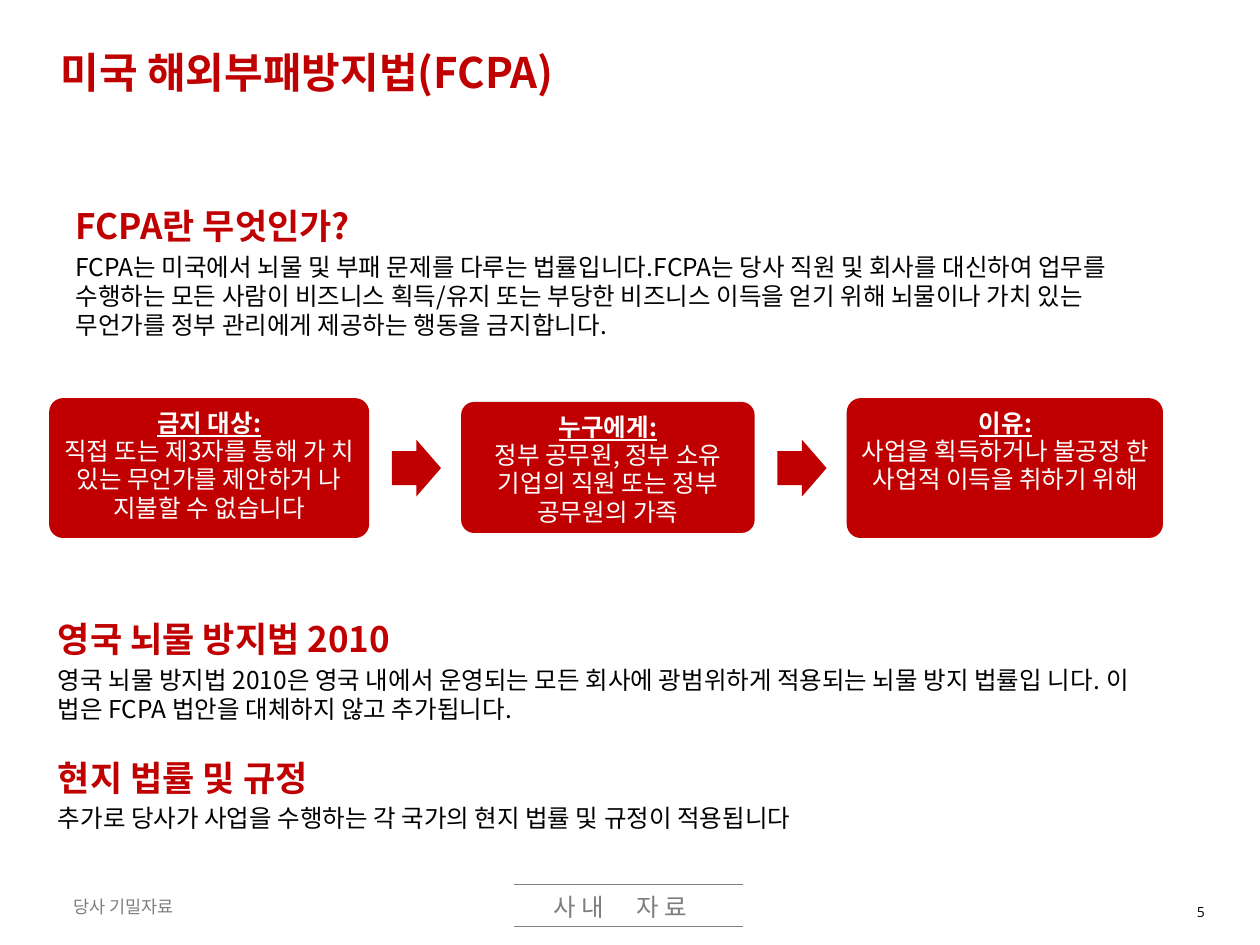
from pptx import Presentation
from pptx.dml.color import RGBColor
from pptx.enum.shapes import MSO_CONNECTOR, MSO_SHAPE as SHAPE
from pptx.enum.text import MSO_AUTO_SIZE as AUTO, PP_ALIGN as ALIGN
from pptx.oxml.ns import qn
from pptx.util import Inches, Pt

RED = RGBColor(0xC0, 0x00, 0x00)
GRAY = RGBColor(0x7E, 0x7E, 0x7E)
BLACK = RGBColor(0x00, 0x00, 0x00)
WHITE = RGBColor(0xFF, 0xFF, 0xFF)
KOREAN, LATIN = "Noto Sans CJK KR", "Open Sans"


class Deck:
    """Holds the style and the current slide."""

    def __init__(self):
        self.prs = Presentation()
        self.prs.slide_width, self.prs.slide_height = Inches(10), Inches(7.5)
        self.s = self.prs.slides.add_slide(self.prs.slide_layouts[6])

    def box(self, x, y, w, h, top=0.0, wrap=True):
        tb = self.s.shapes.add_textbox(Inches(x), Inches(y), Inches(w), Inches(h))
        tf = tb.text_frame
        tf.word_wrap, tf.auto_size = wrap, AUTO.SHAPE_TO_FIT_TEXT
        tf.margin_left = tf.margin_right = tf.margin_bottom = 0
        tf.margin_top = Inches(top)
        return tf

    def para(self, tf, text, size, color, bold=False, underline=False,
             before=0, spacing=None, align=ALIGN.LEFT, font=KOREAN):
        p = tf.add_paragraph() if tf.text else tf.paragraphs[0]
        p.text, p.alignment = text, align
        p.space_before = Pt(before)
        if spacing:
            p.line_spacing = spacing
        for r in p.runs:
            f = r.font
            f.name, f.size, f.bold, f.underline = font, Pt(size), bold, underline
            f.color.rgb = color
            r_pr = r._r.get_or_add_rPr()
            ea = r_pr.makeelement(qn("a:ea"), {"typeface": font})
            r_pr.find(qn("a:latin")).addnext(ea)

    def section(self, tf, heading, body, before=0):
        self.para(tf, heading, 20, RED, bold=True, before=before)
        self.para(tf, body, 14, BLACK, before=3.1)

    def shape(self, kind, x, y, w, h, *adjustments):
        sp = self.s.shapes.add_shape(kind, Inches(x), Inches(y), Inches(w), Inches(h))
        sp.shadow.inherit = False
        sp.fill.solid()
        sp.fill.fore_color.rgb = RED
        sp.line.fill.background()
        for i, value in enumerate(adjustments):
            sp.adjustments[i] = value

    def rule(self, x1, x2, y):
        c = self.s.shapes.add_connector(
            MSO_CONNECTOR.STRAIGHT, Inches(x1), Inches(y), Inches(x2), Inches(y))
        c.line.color.rgb, c.line.width = GRAY, Pt(0.5)
        sp_pr = c._element.spPr
        sp_pr.append(sp_pr.makeelement(qn("a:effectLst"), {}))


def main():
    d = Deck()

    # Title
    d.para(d.box(0.48, 0.35, 4.23, 0.43, 0.02), "미국 해외부패방지법(FCPA)", 24, RED, bold=True)

    # Introduction
    d.section(d.box(0.6, 1.48, 8.65, 1.17, 0.14), "FCPA란 무엇인가?",
              "FCPA는 미국에서 뇌물 및 부패 문제를 다루는 법률입니다.FCPA는 당사 직원 및 회사를 "
              "대신하여 업무를 수행하는 모든 사람이 비즈니스 획득/유지 또는 부당한 비즈니스 이득을 "
              "얻기 위해 뇌물이나 가치 있는 무언가를 정부 관리에게 제공하는 행동을 금지합니다.")

    # Cards: card left, top, width, height; text left, width
    cards = [
        ((0.39, 3.16, 2.54, 1.11), (0.48, 2.36), "금지 대상:",
         "직접 또는 제3자를 통해 가 치 있는 무언가를 제안하거 나 지불할 수 없습니다"),
        ((3.66, 3.19, 2.33, 1.04), (3.81, 2.03), "누구에게:",
         "정부 공무원, 정부 소유 기업의 직원 또는 정부 공무원의 가족"),
        ((6.72, 3.16, 2.51, 1.11), (6.83, 2.3), "이유:",
         "사업을 획득하거나 불공정 한 사업적 이득을 취하기 위해"),
    ]
    for card, (x, w), heading, body in cards:
        d.shape(SHAPE.ROUNDED_RECTANGLE, *card, 0.1)
        tf = d.box(x, card[1] + 0.05, w, 0.94, 0.03)
        d.para(tf, heading, 14, WHITE, bold=True, underline=True,
               spacing=Pt(16.6), align=ALIGN.CENTER)
        d.para(tf, body, 14, WHITE, before=0.2, spacing=0.97, align=ALIGN.CENTER)

    # Arrows between the cards
    for x in (3.11, 6.17):
        d.shape(SHAPE.RIGHT_ARROW, x, 3.49, 0.39, 0.45, 0.6, 0.5)

    # Other laws
    tf = d.box(0.46, 4.76, 8.72, 1.82, 0.14)
    d.section(tf, "영국 뇌물 방지법 2010",
              "영국 뇌물 방지법 2010은 영국 내에서 운영되는 모든 회사에 광범위하게 적용되는 "
              "뇌물 방지 법률입 니다. 이 법은 FCPA 법안을 대체하지 않고 추가됩니다.")
    d.section(tf, "현지 법률 및 규정",
              "추가로 당사가 사업을 수행하는 각 국가의 현지 법률 및 규정이 적용됩니다", before=18.5)

    # Footer
    for y in (7.02, 7.35):
        d.rule(4.08, 5.9, y)
    for x, text in ((4.39, "사 내"), (5.05, "자 료")):
        d.para(d.box(x, 7.09, 0.49, 0.22), text, 14, GRAY, spacing=Pt(15.8))
    d.para(d.box(0.58, 7.12, 0.95, 0.17), "당사 기밀자료", 10, GRAY, spacing=Pt(11.6))
    d.para(d.box(9.5, 7.12, 0.1, 0.24, 0.05, wrap=False), "5", 8, BLACK, font=LATIN)

    d.prs.save("out.pptx")


if __name__ == "__main__":
    main()
